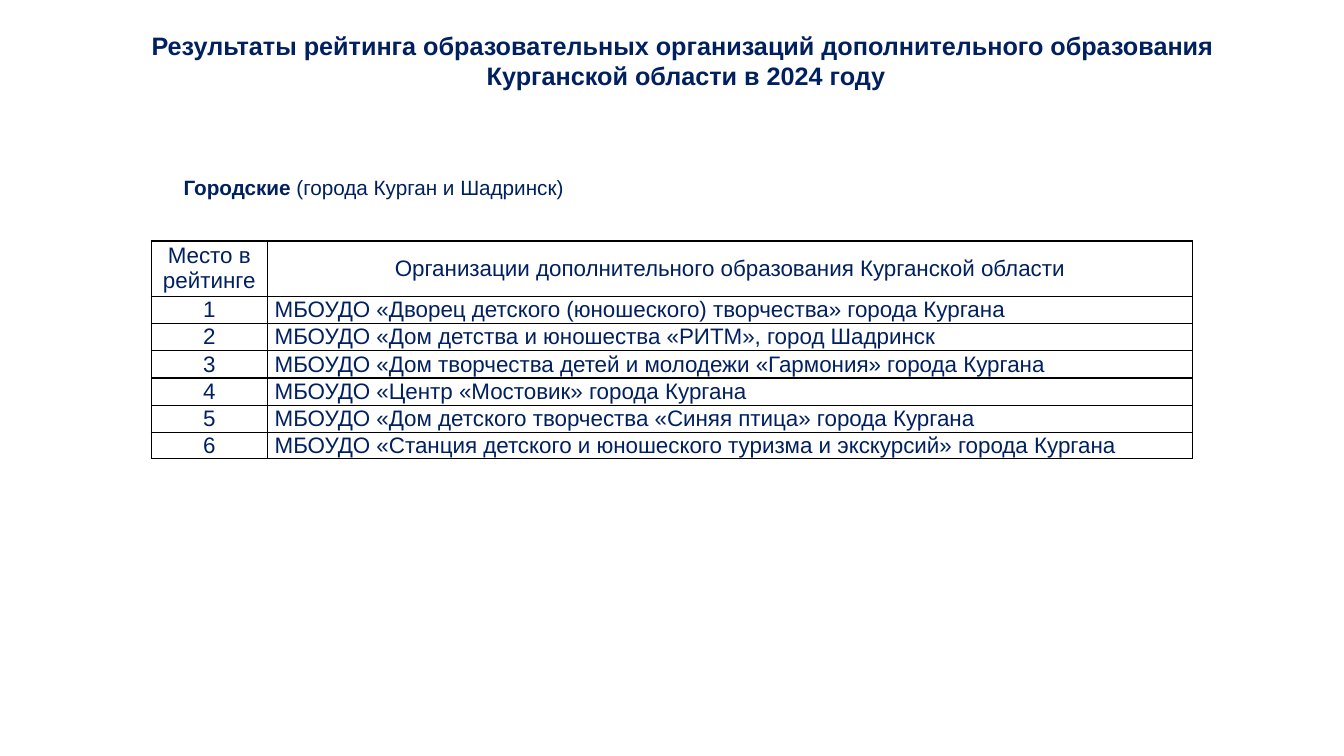
from pptx import Presentation
from pptx.dml.color import RGBColor
from pptx.enum.text import MSO_ANCHOR, PP_ALIGN
from pptx.oxml import parse_xml
from pptx.oxml.ns import nsdecls
from pptx.util import Inches, Pt


def color(value):
    return RGBColor.from_string(value)


def add_text(para, text, size, bold=False):
    span = para.add_run()
    span.text = text
    for name, value in {"name": "Arial", "size": Pt(size), "bold": bold}.items():
        setattr(span.font, name, value)
    span.font.color.rgb = color("002060")


deck = Presentation()
deck.slide_width = Inches(13.33)
deck.slide_height = Inches(7.5)
page = deck.slides.add_slide(deck.slide_layouts[0])

title = page.shapes.title
subtitle = page.placeholders[1]
headings = [
    (title, (1.14, 0.23, 11.33, 0.74)),
    (subtitle, (1.31, 1.68, 4.79, 0.35)),
]
for box, place in headings:
    for name, value in zip(("left", "top", "width", "height"), place):
        setattr(box, name, Inches(value))
    frame = box.text_frame
    frame.word_wrap = True
    frame.vertical_anchor = MSO_ANCHOR.MIDDLE
    para = frame.paragraphs[0]
    line_format = {
        "alignment": PP_ALIGN.CENTER,
        "line_spacing": 1.0,
        "space_before": Pt(0),
    }
    for name, value in line_format.items():
        setattr(para, name, value)

title_para = title.text_frame.paragraphs[0]
add_text(title_para, "Результаты рейтинга образовательных организаций дополнительного образования ", 18, True)
title_para.add_line_break()
add_text(title_para, "Курганской области в 2024 году", 18, True)

subtitle_para = subtitle.text_frame.paragraphs[0]
add_text(subtitle_para, "Городские", 14.8, True)
add_text(subtitle_para, " (города Курган и Шадринск)", 14.8)

organizations = [
    "МБОУДО «Дворец детского (юношеского) творчества» города Кургана",
    "МБОУДО «Дом детства и юношества «РИТМ», город Шадринск",
    "МБОУДО «Дом творчества детей и молодежи «Гармония» города Кургана",
    "МБОУДО «Центр «Мостовик» города Кургана",
    "МБОУДО «Дом детского творчества «Синяя птица» города Кургана",
    "МБОУДО «Станция детского и юношеского туризма и экскурсий» города Кургана",
]
rows = [("Место в рейтинге", "Организации дополнительного образования Курганской области")]
rows += [(str(rank), name) for rank, name in enumerate(organizations, 1)]
row_heights = [0.55] + [0.27] * 5 + [0.26]

table = page.shapes.add_table(
    len(rows), 2, Inches(1.5), Inches(2.39), Inches(10.33), Inches(2.16)
).table
table.first_row = False
table.horz_banding = False
table.columns[0].width = Inches(1.15)
table.columns[1].width = Inches(9.18)
cell_format = {
    "margin_left": Pt(5.4),
    "margin_right": Pt(5.4),
    "margin_top": 0,
    "margin_bottom": 0,
    "vertical_anchor": MSO_ANCHOR.MIDDLE,
}

for row_index, row in enumerate(rows):
    table.rows[row_index].height = Inches(row_heights[row_index])
    for column_index, text in enumerate(row):
        cell = table.cell(row_index, column_index)
        for name, value in cell_format.items():
            setattr(cell, name, value)
        para = cell.text_frame.paragraphs[0]
        centered = row_index == 0 or column_index == 0
        para.alignment = PP_ALIGN.CENTER if centered else PP_ALIGN.LEFT
        add_text(para, text, 16)
        properties = cell._tc.get_or_add_tcPr()
        for side in ("lnL", "lnR", "lnT", "lnB"):
            properties.append(parse_xml(
                f'<a:{side} {nsdecls("a")} w="{Pt(1)}"><a:solidFill>'
                f'<a:srgbClr val="000000"/></a:solidFill></a:{side}>'
            ))
        cell.fill.background()

deck.save("out.pptx")
